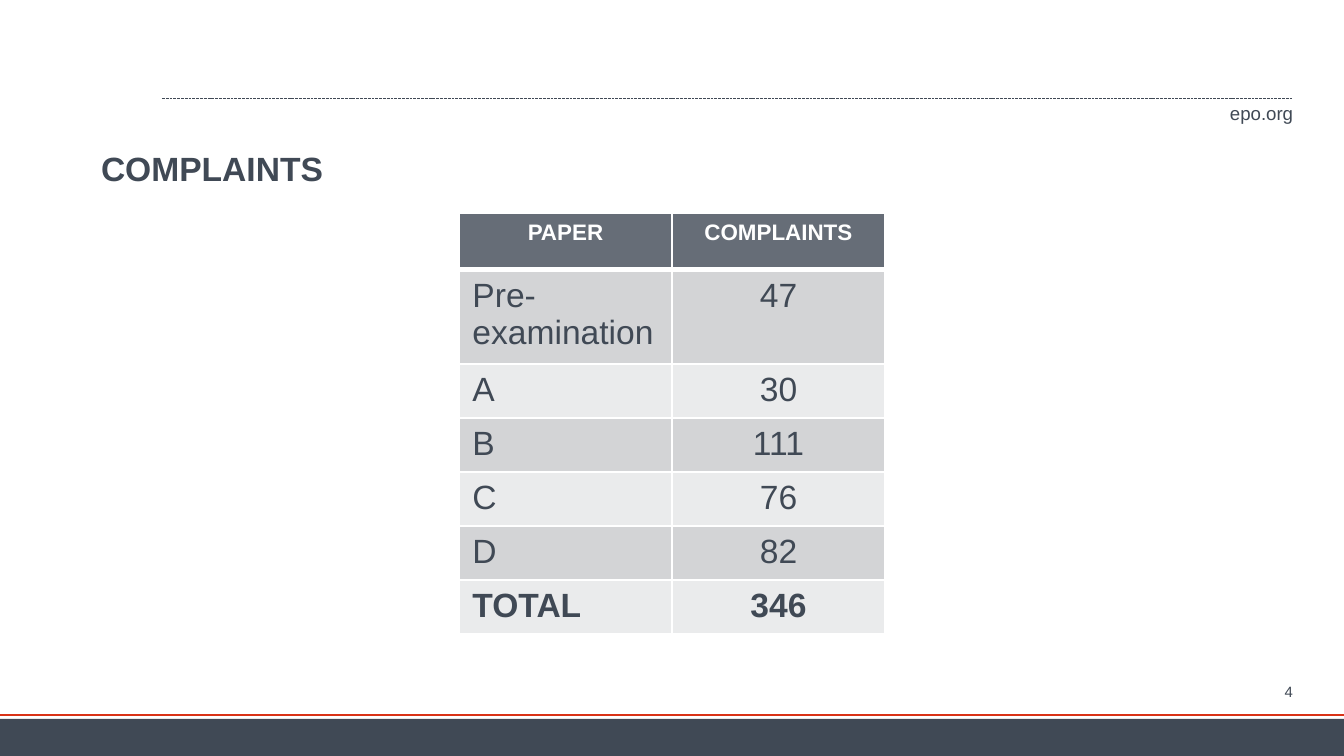
import pptx
import pptx.util
import pptx.dml.color
import pptx.enum.dml
import pptx.enum.shapes
import pptx.enum.text
import pptx.oxml
import pptx.oxml.ns
import lxml.etree

COLORS = {
    "ink": "404955",
    "red": "D93317",
    "white": "FFFFFF",
    "header": "666D77",
    "dark_band": "D3D4D6",
    "light_band": "EAEBEC",
}
FONT = "Arial"
TITLE = "COMPLAINTS"
SITE = "epo.org"
PAGE = "4"
COMPLAINTS = [
    ("PAPER", "COMPLAINTS"),
    ("Pre-examination", "47"),
    ("A", "30"),
    ("B", "111"),
    ("C", "76"),
    ("D", "82"),
    ("TOTAL", "346"),
]

SLIDE_W, SLIDE_H = 1344, 756
RIGHT_EDGE = 1293
TABLE_TOP, COLUMN_W, HEADER_H, ROW_H = 213, 213, 57, 54
EMU_PER_PX = 914400 / 134.4

ALIGN = pptx.enum.text.PP_ALIGN
ANCHOR = pptx.enum.text.MSO_ANCHOR


def px(length):
    return pptx.util.Emu(round(length * EMU_PER_PX))


def color(name):
    return pptx.dml.color.RGBColor.from_string(COLORS[name])


def write(frame, text, size, align=ALIGN.LEFT, bold=False, ink="ink"):
    frame.text = text
    paragraph = frame.paragraphs[0]
    paragraph.alignment = align
    font = paragraph.runs[0].font
    font.name, font.size, font.bold = FONT, pptx.util.Pt(size), bold
    font.color.rgb = color(ink)


def clear_margins(frame, anchor):
    frame.margin_left = frame.margin_top = 0
    frame.margin_right = frame.margin_bottom = 0
    frame.vertical_anchor = anchor


def add_label(text, size, left, top, height):
    label = slide.shapes.add_textbox(
        px(left), px(top), px(RIGHT_EDGE - left), px(height))
    clear_margins(label.text_frame, ANCHOR.MIDDLE)
    write(label.text_frame, text, size, ALIGN.RIGHT)


def add_rule(left, right, y, ink, width):
    rule = slide.shapes.add_connector(
        pptx.enum.shapes.MSO_CONNECTOR.STRAIGHT, px(left), px(y), px(right), px(y))
    rule.line.color.rgb = color(ink)
    rule.line.width = pptx.util.Pt(width)
    lxml.etree.SubElement(
        rule._element.spPr, pptx.oxml.ns.qn("a:effectLst"))
    return rule


def add_borders(cell, bottom_width):
    properties = cell._tc.get_or_add_tcPr()
    for side, width in (("L", 1), ("R", 1), ("T", 1), ("B", bottom_width)):
        properties.append(pptx.oxml.parse_xml(
            f'<a:ln{side} {pptx.oxml.ns.nsdecls("a")} w="{pptx.util.Pt(width)}">'
            f'<a:solidFill><a:srgbClr val="{COLORS["white"]}"/></a:solidFill>'
            f'</a:ln{side}>'))


presentation = pptx.Presentation()
presentation.slide_width, presentation.slide_height = px(SLIDE_W), px(SLIDE_H)
slide = presentation.slides.add_slide(presentation.slide_layouts[5])

title = slide.shapes.title
title.left, title.top = px(101), px(106)
title.width, title.height = px(RIGHT_EDGE - 101), px(82)
clear_margins(title.text_frame, ANCHOR.BOTTOM)
write(title.text_frame, TITLE, 18, bold=True)

add_label(SITE, 10, 1230, 101, 23)
header_rule = add_rule(162, RIGHT_EDGE, 99, "ink", 0.5)
header_rule.line.dash_style = pptx.enum.dml.MSO_LINE.SQUARE_DOT

footer = slide.shapes.add_shape(
    pptx.enum.shapes.MSO_SHAPE.RECTANGLE, 0, px(719), px(SLIDE_W), px(SLIDE_H - 719))
footer.shadow.inherit = False
footer.fill.solid()
footer.fill.fore_color.rgb = color("ink")
footer.line.fill.background()
add_rule(0, SLIDE_W, 715, "red", 1.5)
add_label(PAGE, 8, 1214, 683, 17)

row_heights = [HEADER_H] + [ROW_H] * (len(COMPLAINTS) - 1)
table_w = 2 * COLUMN_W
table = slide.shapes.add_table(
    len(COMPLAINTS), 2, px((SLIDE_W - table_w) / 2), px(TABLE_TOP),
    px(table_w), px(sum(row_heights))).table
for column in table.columns:
    column.width = px(COLUMN_W)

for r, (record, height) in enumerate(zip(COMPLAINTS, row_heights)):
    table.rows[r].height = px(height)
    is_header = r == 0
    is_total = r == len(COMPLAINTS) - 1
    band = "header" if is_header else "dark_band" if r % 2 else "light_band"
    for c, text in enumerate(record):
        cell = table.cell(r, c)
        add_borders(cell, 3 if is_header else 1)
        cell.fill.solid()
        cell.fill.fore_color.rgb = color(band)
        write(cell.text_frame, text, 12 if is_header else 18,
              ALIGN.CENTER if is_header or c else ALIGN.LEFT,
              is_header or is_total, "white" if is_header else "ink")

presentation.save("out.pptx")
